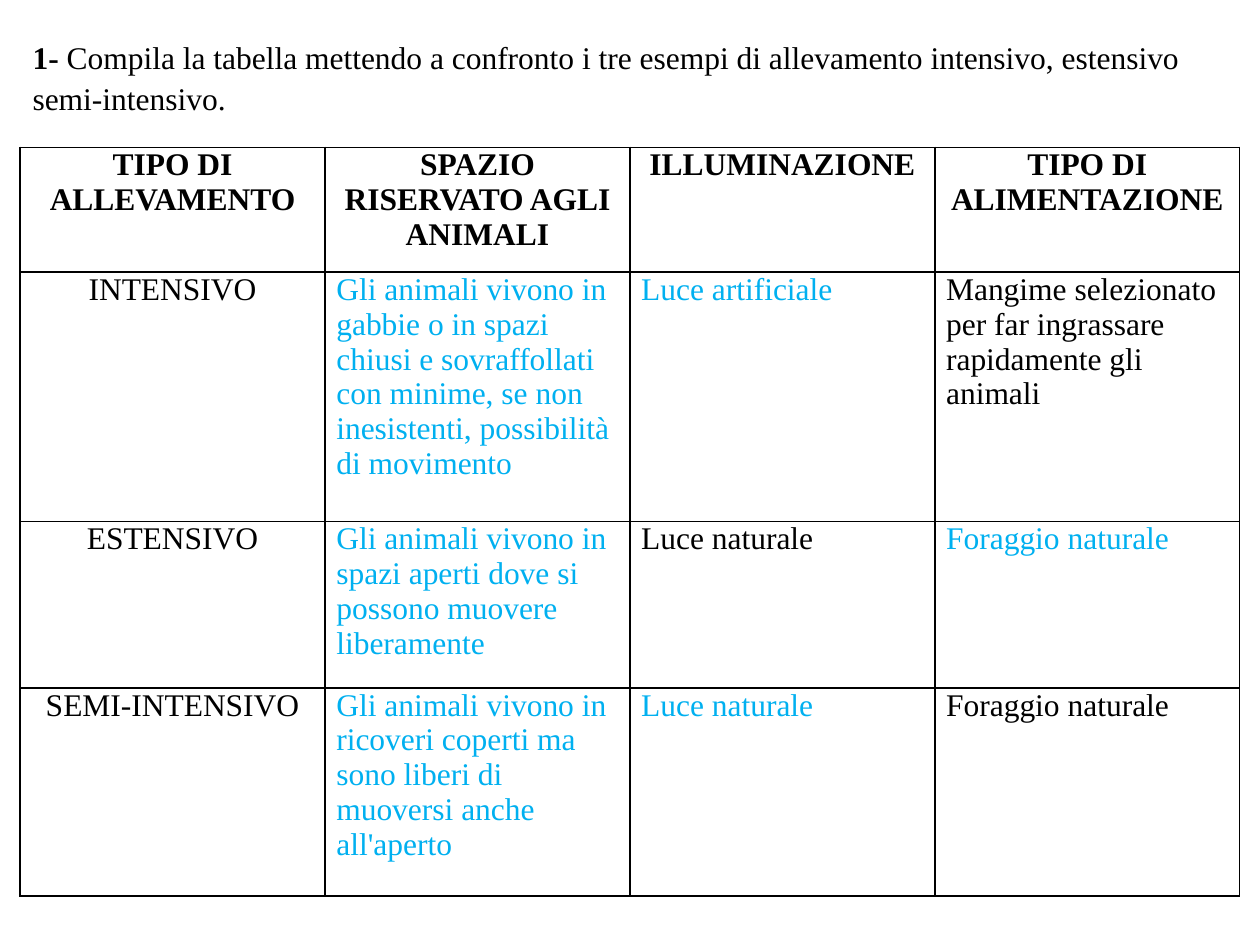
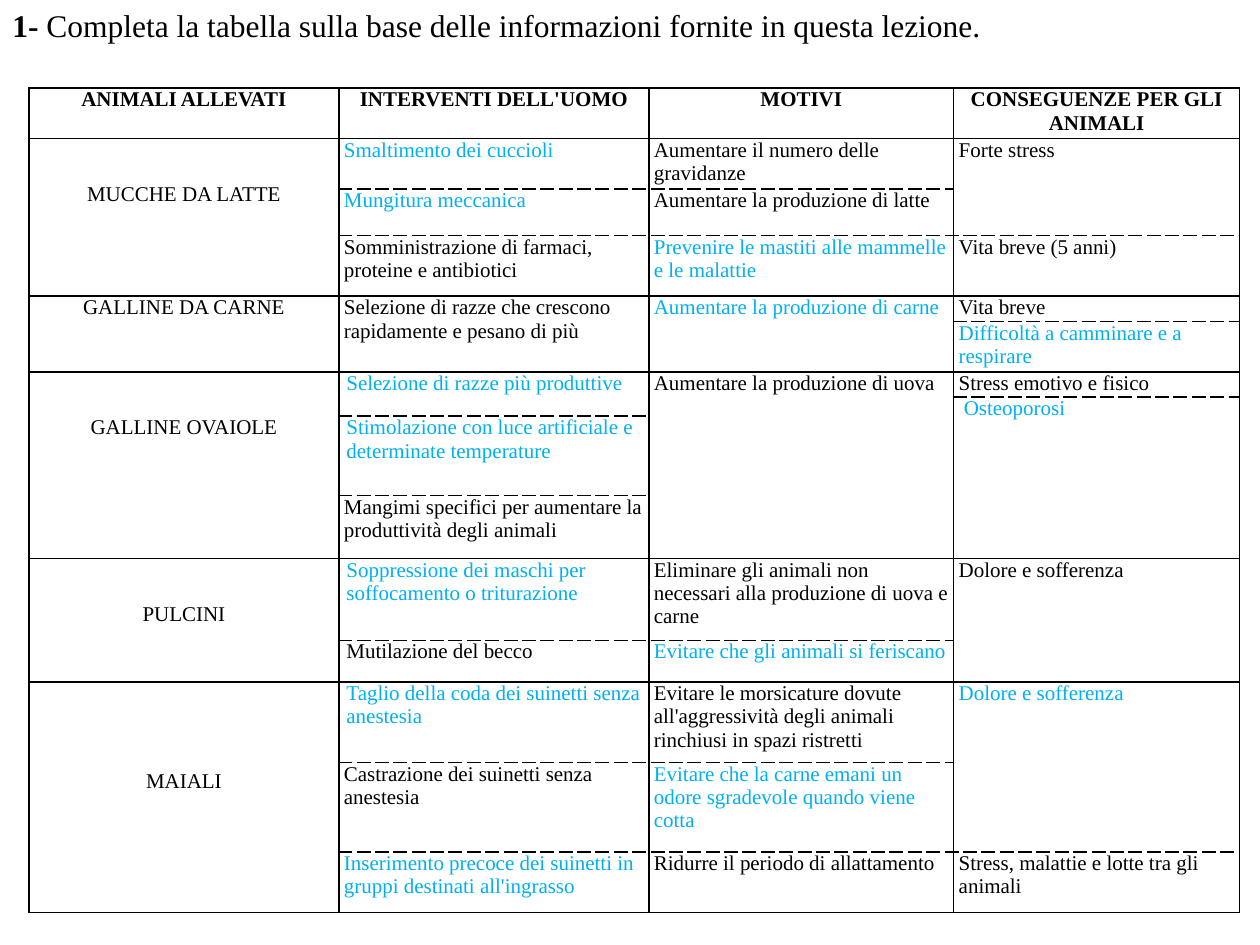
"""Build two worksheet slides with tables about types of animal farming."""
from dataclasses import dataclass

from lxml import etree
from pptx import Presentation
from pptx import util as u
from pptx.dml.color import RGBColor
from pptx.enum import text
from pptx.oxml.ns import qn


@dataclass(frozen=True)
class Theme:
    font: str = "Times New Roman"
    ink: str = "000000"
    answer: str = "00B0F0"
    paper: str = "FFFFFF"
    title: int = 18
    small: int = 12
    border: int = 1


T = Theme()
CENTER, LEFT = text.PP_ALIGN.CENTER, text.PP_ALIGN.LEFT


def write(p, words, size=T.title, color=T.ink, bold=False, align=LEFT):
    p.alignment = align
    r = p.add_run()
    r.text = words
    r.font.name, r.font.size, r.font.bold = T.font, u.Pt(size), bold
    r.font.color.rgb = RGBColor.from_string(color)


def draw_border(cell, side, dashed):
    ln = etree.SubElement(cell._tc.get_or_add_tcPr(), qn(f"a:ln{side}"),
                          w=str(u.Pt(T.border)))
    fill = etree.SubElement(ln, qn("a:solidFill"))
    etree.SubElement(fill, qn("a:srgbClr"), val=T.ink)
    etree.SubElement(ln, qn("a:prstDash"), val="dash" if dashed else "solid")


# Cells run down each column as (rows spanned, text, extra left or top inset);
# a leading * marks an answer.
farming_types = [
    [(1, "TIPO DI ALLEVAMENTO", 0), (1, "INTENSIVO", 0),
     (1, "ESTENSIVO", 0), (1, "SEMI-INTENSIVO", 0)],
    [(1, "SPAZIO RISERVATO AGLI ANIMALI", 0),
     (1, "*Gli animali vivono in gabbie o in spazi chiusi e sovraffollati "
         "con minime, se non inesistenti, possibilità di movimento", 0),
     (1, "*Gli animali vivono in spazi aperti dove si possono muovere liberamente", 0),
     (1, "*Gli animali vivono in ricoveri coperti ma sono liberi di muoversi "
         "anche all'aperto", 0)],
    [(1, "ILLUMINAZIONE", 0), (1, "*Luce artificiale", 0),
     (1, "Luce naturale", 0), (1, "*Luce naturale", 0)],
    [(1, "TIPO DI ALIMENTAZIONE", 0),
     (1, "Mangime selezionato per far ingrassare rapidamente gli animali", 0),
     (1, "*Foraggio naturale", 0), (1, "Foraggio naturale", 0)],
]
interventions = [
    [(1, "ANIMALI ALLEVATI", 0), (3, "MUCCHE DA LATTE", 0.35),
     (2, "GALLINE DA CARNE", 0), (4, "GALLINE OVAIOLE", 0.35),
     (2, "PULCINI", 0.35), (3, "MAIALI", 0.7)],
    [(1, "INTERVENTI DELL'UOMO", 0),
     (1, "*Smaltimento dei cuccioli", 0),
     (1, "*Mungitura meccanica", 0),
     (1, "Somministrazione di farmaci, proteine e antibiotici", 0),
     (2, "Selezione di razze che crescono rapidamente e pesano di più", 0),
     (2, "*Selezione di razze più produttive", 0.02),
     (1, "*Stimolazione con luce artificiale e determinate temperature", 0.02),
     (1, "Mangimi specifici per aumentare la produttività degli animali", 0),
     (1, "*Soppressione dei maschi per soffocamento o triturazione", 0.02),
     (1, "Mutilazione del becco", 0.02),
     (1, "*Taglio della coda dei suinetti senza anestesia", 0.02),
     (1, "Castrazione dei suinetti senza anestesia", 0),
     (1, "*Inserimento precoce dei suinetti in gruppi destinati all'ingrasso", 0)],
    [(1, "MOTIVI", 0),
     (1, "Aumentare il numero delle gravidanze", 0),
     (1, "Aumentare la produzione di latte", 0),
     (1, "*Prevenire le mastiti alle mammelle e le malattie", 0),
     (2, "*Aumentare la produzione di carne", 0),
     (4, "Aumentare la produzione di uova", 0),
     (1, "Eliminare gli animali non necessari alla produzione di uova e carne", 0),
     (1, "*Evitare che gli animali si feriscano", 0),
     (1, "Evitare le morsicature dovute all'aggressività degli animali "
         "rinchiusi in spazi ristretti", 0),
     (1, "*Evitare che la carne emani un odore sgradevole quando viene cotta", 0),
     (1, "Ridurre il periodo di allattamento", 0)],
    [(1, "CONSEGUENZE PER GLI ANIMALI", 0),
     (2, "Forte stress", 0), (1, "Vita breve (5 anni)", 0),
     (1, "Vita breve", 0), (1, "*Difficoltà a camminare e a respirare", 0),
     (1, "Stress emotivo e fisico", 0), (3, "*Osteoporosi", 0.04),
     (2, "Dolore e sofferenza", 0),
     (2, "*Dolore e sofferenza", 0),
     (1, "Stress, malattie e lotte tra gli animali", 0)],
]

pages = [
    dict(title="Compila la tabella mettendo a confronto i tre esempi di allevamento "
               "intensivo, estensivo semi-intensivo.",
         box=(0.16, 0.23, 9.61, 0.71), wrap=True, spacing=1.08,
         anchor=text.MSO_ANCHOR.TOP,
         at=(0.16, 1.17), widths=[2.42] * 4, heights=[0.99, 1.98, 1.32, 1.65],
         size=T.title, inset=0.09, columns=farming_types),
    dict(title="Completa la tabella sulla base delle informazioni fornite in questa lezione.",
         box=(0, 0, 7.97, 0.4), wrap=False, spacing=1,
         anchor=text.MSO_ANCHOR.MIDDLE,
         at=(0.23, 0.7), widths=[2.46, 2.46, 2.42, 2.27],
         heights=[0.4, 0.4, 0.37, 0.48, 0.2, 0.4, 0.2, 0.15,
                  0.63, 0.5, 0.65, 0.33, 0.64, 0.71, 0.48],
         size=T.small, inset=0.04, columns=interventions),
]

prs = Presentation()
prs.slide_width, prs.slide_height = u.Inches(10), u.Inches(7.5)

for page in pages:
    s = prs.slides.add_slide(prs.slide_layouts[6])
    sp = s.shapes.add_textbox(*map(u.Inches, page["box"]))
    tf = sp.text_frame
    tf.word_wrap, tf.vertical_anchor = page["wrap"], page["anchor"]
    p = tf.paragraphs[0]
    p.line_spacing = page["spacing"]
    write(p, "1- ", bold=True)
    write(p, page["title"])

    widths, heights, columns = page["widths"], page["heights"], page["columns"]
    frame = s.shapes.add_table(len(heights), len(widths), *map(
        u.Inches, (*page["at"], sum(widths), sum(heights))))
    tbl = frame.table
    tbl.first_row = tbl.horz_banding = False
    for col, width in zip(tbl.columns, widths):
        col.width = u.Inches(width)
    for row, height in zip(tbl.rows, heights):
        row.height = u.Inches(height)

    group_starts, start = {0}, 0
    for span, _, _ in columns[0]:
        start += span
        group_starts.add(start)

    for c, column in enumerate(columns):
        start = 0
        for span, words, extra in column:
            end = start + span
            cell = tbl.cell(start, c)
            if span > 1:
                cell.merge(tbl.cell(end - 1, c))
            for i in range(start, end):
                part = tbl.cell(i, c)
                part.margin_top = part.margin_bottom = 0
                part.margin_left = part.margin_right = u.Inches(page["inset"])
                for side, dashed in (("L", False), ("R", False),
                                     ("T", start not in group_starts),
                                     ("B", end not in group_starts)):
                    draw_border(part, side, dashed)
                part.fill.solid()
                part.fill.fore_color.rgb = RGBColor.from_string(T.paper)
            if c == 0:
                cell.margin_top = u.Inches(extra)
            else:
                cell.margin_left = u.Inches(page["inset"] + extra)
            write(cell.text_frame.paragraphs[0], words.lstrip("*"), size=page["size"],
                  color=T.answer if words.startswith("*") else T.ink,
                  bold=start == 0, align=CENTER if c == 0 or start == 0 else LEFT)
            start = end

prs.save("out.pptx")
